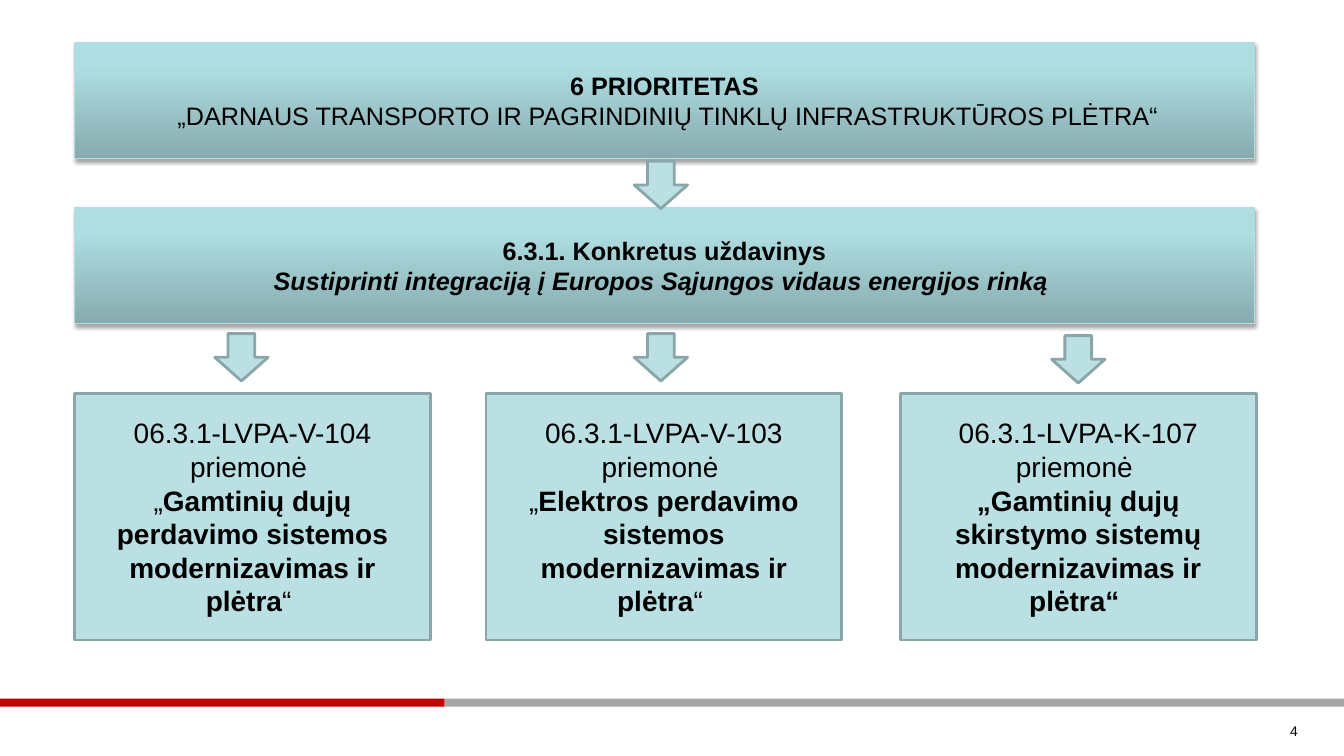
import lxml.etree
import pptx
import pptx.dml.color
import pptx.enum.shapes
import pptx.enum.text
import pptx.oxml.ns
import pptx.util

Inches = pptx.util.Inches
SHAPES = pptx.enum.shapes.MSO_SHAPE
ALIGN = pptx.enum.text.PP_ALIGN

BANNER_STOPS = [(0, "87ABAE"), (80, "AFDEE2"), (100, "AFE0E4")]
BANNERS = [
    (0.42, [[("6 PRIORITETAS", "b")],
            [(" „DARNAUS TRANSPORTO IR PAGRINDINIŲ TINKLŲ INFRASTRUKTŪROS PLĖTRA“", "")]]),
    (2.06, [[("6.3.1. Konkretus uždavinys", "b")],
            [("Sustiprinti integraciją į Europos Sąjungos vidaus energijos rinką ", "bi")]]),
]
MEASURES = [
    (0.74, [[("06.3.1-LVPA-V-104 priemonė ", "")],
            [("„", ""), ("Gamtinių dujų perdavimo sistemos modernizavimas ir plėtra", "b"),
             ("“ ", "")]]),
    (4.82, [[("06.3.1-LVPA-V-103 priemonė ", "")],
            [("„", ""), ("Elektros perdavimo sistemos modernizavimas ir plėtra", "b"),
             ("“ ", "")]]),
    (8.93, [[("06.3.1-LVPA-K-107 priemonė ", "")],
            [("„Gamtinių dujų skirstymo sistemų modernizavimas ir plėtra“ ", "b")]]),
]
ARROWS = [(6.29, 1.6), (2.13, 3.31), (6.29, 3.31), (10.43, 3.33)]


def color(value):
    """Return the colour for a hex string."""
    return pptx.dml.color.RGBColor.from_string(value)


def write_text(shape, paragraphs, size, alignment=ALIGN.CENTER):
    """Fill a shape with paragraphs of (text, style) runs, b for bold and i for italic."""
    frame = shape.text_frame
    frame.word_wrap = True
    frame.vertical_anchor = pptx.enum.text.MSO_ANCHOR.MIDDLE
    for index, runs in enumerate(paragraphs):
        paragraph = frame.add_paragraph() if index else frame.paragraphs[0]
        paragraph.alignment = alignment
        for text, style in runs:
            run = paragraph.add_run()
            run.text = text
            run.font.name = "Arial"
            run.font.size = pptx.util.Pt(size)
            run.font.bold = "b" in style
            run.font.italic = "i" in style
            run.font.color.rgb = color("000000")


def add_block(slide, preset, box, fill, line=None, width=2):
    """Add a flat shape in a box of left, top, width and height in inches."""
    shape = slide.shapes.add_shape(preset, *map(Inches, box))
    shape.shadow.inherit = False
    shape.fill.solid()
    shape.fill.fore_color.rgb = color(fill)
    if line:
        shape.line.color.rgb = color(line)
        shape.line.width = pptx.util.Pt(width)
    else:
        shape.line.fill.background()
    return shape


def add_child(parent, tag, **attributes):
    """Append a drawing element with attributes to its parent."""
    child = lxml.etree.SubElement(parent, pptx.oxml.ns.qn(tag))
    for name, value in attributes.items():
        child.set(name, str(value))
    return child


def add_banner(slide, box, paragraphs):
    """Add a wide banner with a vertical gradient and a soft shadow."""
    shape = add_block(slide, SHAPES.RECTANGLE, box, "AFDEE2", "B6DCDF", 0.75)
    shape.fill.gradient()
    shape.fill.gradient_angle = 90
    properties = shape._element.spPr
    stops = properties.find(".//" + pptx.oxml.ns.qn("a:gsLst"))
    for stop in list(stops):
        stops.remove(stop)
    for position, value in BANNER_STOPS:
        stop = add_child(stops, "a:gs", pos=position * 1000)
        add_child(stop, "a:srgbClr", val=value)
    effects = properties.find(pptx.oxml.ns.qn("a:effectLst"))
    shadow = add_child(effects, "a:outerShdw", blurRad=pptx.util.Pt(3.1),
                       dist=pptx.util.Pt(1.8), dir=90 * 60000, rotWithShape=0)
    shade = add_child(shadow, "a:srgbClr", val="000000")
    add_child(shade, "a:alpha", val=35000)
    write_text(shape, paragraphs, 18)


def add_measure(slide, box, paragraphs):
    """Add one measure card."""
    shape = add_block(slide, SHAPES.RECTANGLE, box, "BBE0E3", "8AA6A8")
    write_text(shape, paragraphs, 20)


def add_footer(slide, box, number):
    """Add the two-colour rule and the slide number below it."""
    left, top, width, height = box
    red_width = 4.41
    add_block(slide, SHAPES.RECTANGLE, (left, top, red_width, 0.08), "C00000")
    add_block(slide, SHAPES.RECTANGLE,
              (left + red_width, top, width - red_width, 0.08), "A6A6A6")
    number_box = (left + width - 3.47, top + 0.08, 3.11, height - 0.08)
    label = slide.shapes.add_textbox(*map(Inches, number_box))
    write_text(label, [[(number, "")]], 10, ALIGN.RIGHT)


def main():
    """Build and save the slide."""
    presentation = pptx.Presentation()
    presentation.slide_width = Inches(13.33)
    presentation.slide_height = Inches(7.5)
    slide = presentation.slides.add_slide(presentation.slide_layouts[6])
    for top, paragraphs in BANNERS:
        add_banner(slide, (0.74, top, 11.7, 1.15), paragraphs)
    for left, top in ARROWS:
        add_block(slide, SHAPES.DOWN_ARROW, (left, top, 0.53, 0.47), "BBE0E3", "8AA6A8")
    for left, paragraphs in MEASURES:
        add_measure(slide, (left, 3.9, 3.53, 2.45), paragraphs)
    add_footer(slide, (0, 6.93, 13.33, 0.57), "4")
    presentation.save("out.pptx")


if __name__ == "__main__":
    main()
